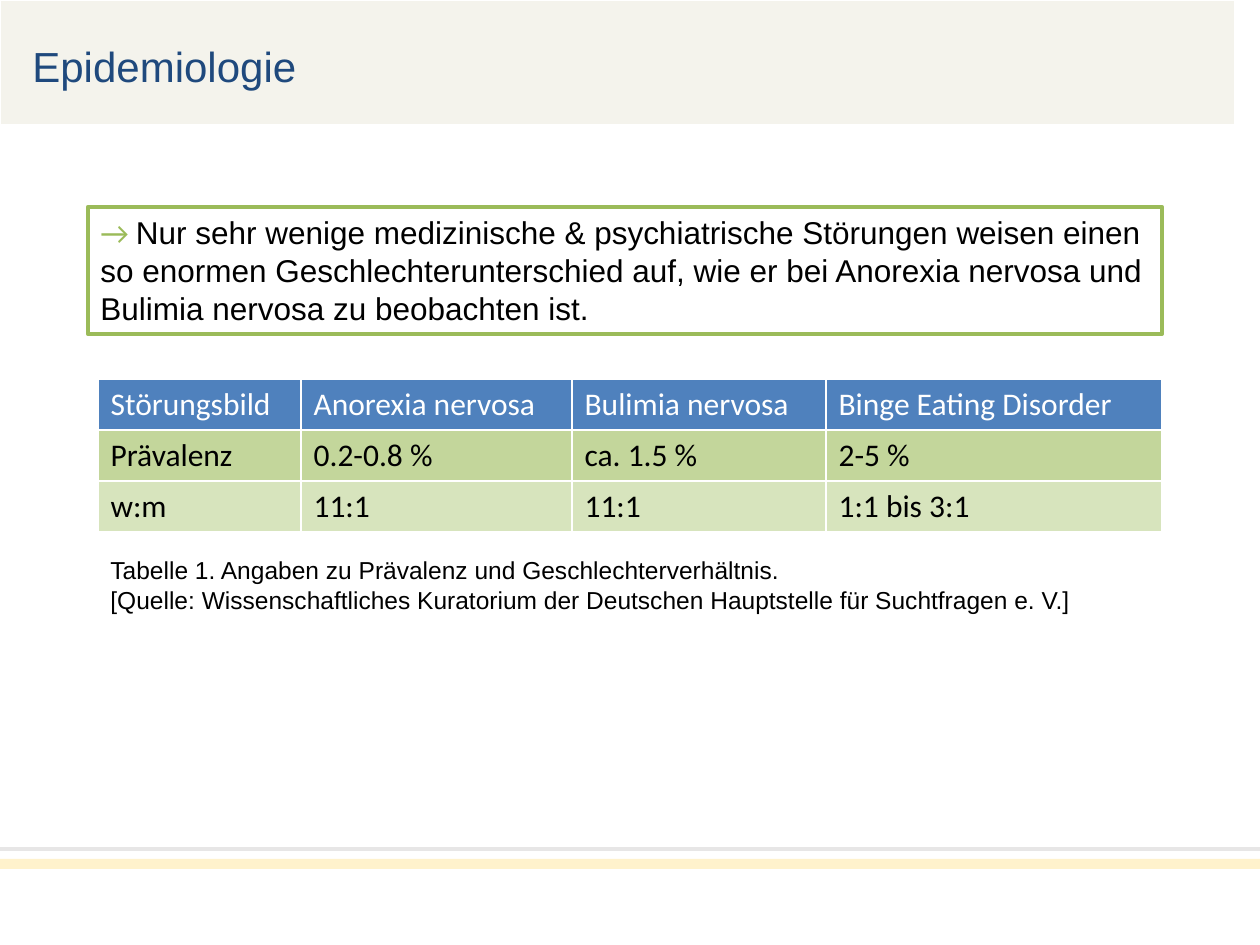
from lxml.etree import SubElement
from pptx import Presentation
from pptx.dml.color import RGBColor
from pptx.enum.shapes import MSO_CONNECTOR as CONN, MSO_SHAPE as SHAPE
from pptx.enum.text import MSO_ANCHOR as ANCHOR, PP_ALIGN as ALIGN
from pptx.oxml.ns import qn
from pptx.util import Emu, Pt

EMU_PER_PX = 914400 / 126
WHITE = RGBColor(0xFF, 0xFF, 0xFF)
BLACK = RGBColor(0x00, 0x00, 0x00)
NAVY = RGBColor(0x1F, 0x49, 0x7D)
BLUE = RGBColor(0x4F, 0x81, 0xBD)
GREEN = RGBColor(0x9B, 0xBB, 0x59)
MID_GREEN = RGBColor(0xC3, 0xD6, 0x9B)
PALE_GREEN = RGBColor(0xD7, 0xE4, 0xBD)
IVORY = RGBColor(0xF4, 0xF3, 0xEC)
CREAM = RGBColor(0xFF, 0xF2, 0xCC)
GREY = RGBColor(0xE7, 0xE6, 0xE6)

ROWS = [
    ["Störungsbild", "Anorexia nervosa", "Bulimia nervosa", "Binge Eating Disorder"],
    ["Prävalenz", "0.2-0.8 %", "ca. 1.5 %", "2-5 %"],
    ["w:m", "11:1", "11:1", "1:1 bis 3:1"],
]
ROW_STYLES = [(BLUE, WHITE), (MID_GREEN, BLACK), (PALE_GREEN, BLACK)]


def px(*lengths):
    return [Emu(round(n * EMU_PER_PX)) for n in lengths]


class SlideBuilder:
    heading_font = "Arial"
    table_font = "Calibri"

    def __init__(self, slide):
        self.shapes = slide.shapes

    def style(self, font, name, size, color):
        font.name, font.size, font.color.rgb = name, Pt(size), color

    def rect(self, box, fill=None, line=None, width=1):
        sp = self.shapes.add_shape(SHAPE.RECTANGLE, *px(*box))
        sp.shadow.inherit = False
        if fill is None:
            sp.fill.background()
        else:
            sp.fill.solid()
            sp.fill.fore_color.rgb = fill
        if line is None:
            sp.line.fill.background()
        else:
            sp.line.color.rgb = line
            sp.line.width = Pt(width)
        return sp

    def text(self, box, lines, size, color):
        tf = self.shapes.add_textbox(*px(*box)).text_frame
        tf.word_wrap = True
        for i, line in enumerate(lines):
            p = tf.add_paragraph() if i else tf.paragraphs[0]
            p.text = line
            self.style(p.font, self.heading_font, size, color)

    def callout(self, box, marker, statement):
        tf = self.rect(box, line=GREEN, width=2.5).text_frame
        tf.word_wrap = True
        tf.vertical_anchor = ANCHOR.TOP
        p = tf.paragraphs[0]
        p.alignment = ALIGN.LEFT
        for words, name, color in [(marker, self.table_font, GREEN),
                                   (statement, self.heading_font, BLACK)]:
            r = p.add_run()
            r.text = words
            self.style(r.font, name, 18, color)

    def rule(self, x1, y1, x2, y2, color, width):
        line = self.shapes.add_connector(CONN.STRAIGHT, *px(x1, y1, x2, y2))
        line.line.color.rgb = color
        line.line.width = Pt(width)
        SubElement(line._element.spPr, qn("a:effectLst"))

    def borders(self, cell, color, width):
        tc_pr = cell._tc.get_or_add_tcPr()
        for i, side in enumerate(("a:lnL", "a:lnR", "a:lnT", "a:lnB")):
            ln = tc_pr.makeelement(qn(side), {"w": str(Pt(width))})
            fill = SubElement(ln, qn("a:solidFill"))
            SubElement(fill, qn("a:srgbClr"), val=str(color))
            tc_pr.insert(i, ln)

    def table(self, left, top, widths, row_height, rows, row_styles):
        box = px(left, top, sum(widths), row_height * len(rows))
        table = self.shapes.add_table(len(rows), len(widths), *box).table
        table.first_row = table.horz_banding = False
        for column, width in zip(table.columns, px(*widths)):
            column.width = width
        for i, (row, (fill, color)) in enumerate(zip(rows, row_styles)):
            for j, words in enumerate(row):
                cell = table.cell(i, j)
                cell.fill.solid()
                cell.fill.fore_color.rgb = fill
                if i and j:
                    cell.vertical_anchor = ANCHOR.MIDDLE
                p = cell.text_frame.paragraphs[0]
                p.text = words
                self.style(p.font, self.table_font, 18, color)
                self.borders(cell, WHITE, 1)


def main():
    prs = Presentation()
    prs.slide_width, prs.slide_height = px(1260, 945)
    s = SlideBuilder(prs.slides.add_slide(prs.slide_layouts[6]))

    s.rect((0, 0, 1235, 125), fill=IVORY, line=WHITE, width=0.75)
    s.text((20, 34, 916, 63), ["Epidemiologie"], 24, NAVY)
    s.table(98, 379, [203, 271, 254, 336], 51, ROWS, ROW_STYLES)
    s.text((98, 549, 1064, 72), [
        "Tabelle 1. Angaben zu Prävalenz und Geschlechterverhältnis.",
        "[Quelle: Wissenschaftliches Kuratorium der Deutschen Hauptstelle "
        "für Suchtfragen e. V.]",
    ], 14, BLACK)
    s.callout((88, 207, 1074, 127), "→ ",
              "Nur sehr wenige medizinische & psychiatrische Störungen weisen "
              "einen so enormen Geschlechterunterschied auf, wie er bei "
              "Anorexia nervosa und Bulimia nervosa zu beobachten ist.")
    s.rule(0, 849, 1260, 849, GREY, 2)
    s.rect((0, 859, 1260, 10), fill=CREAM)

    prs.save("out.pptx")


if __name__ == "__main__":
    main()
